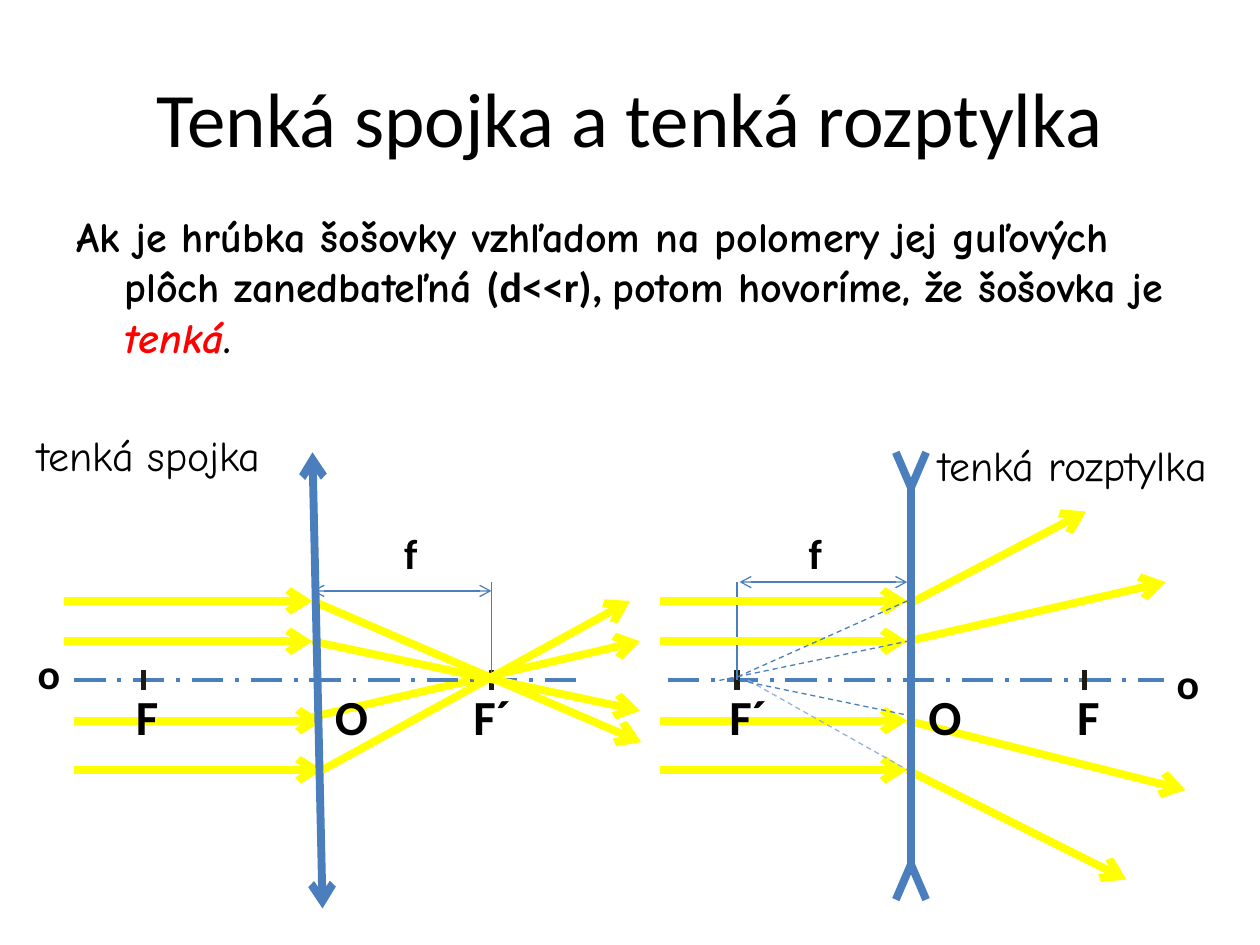
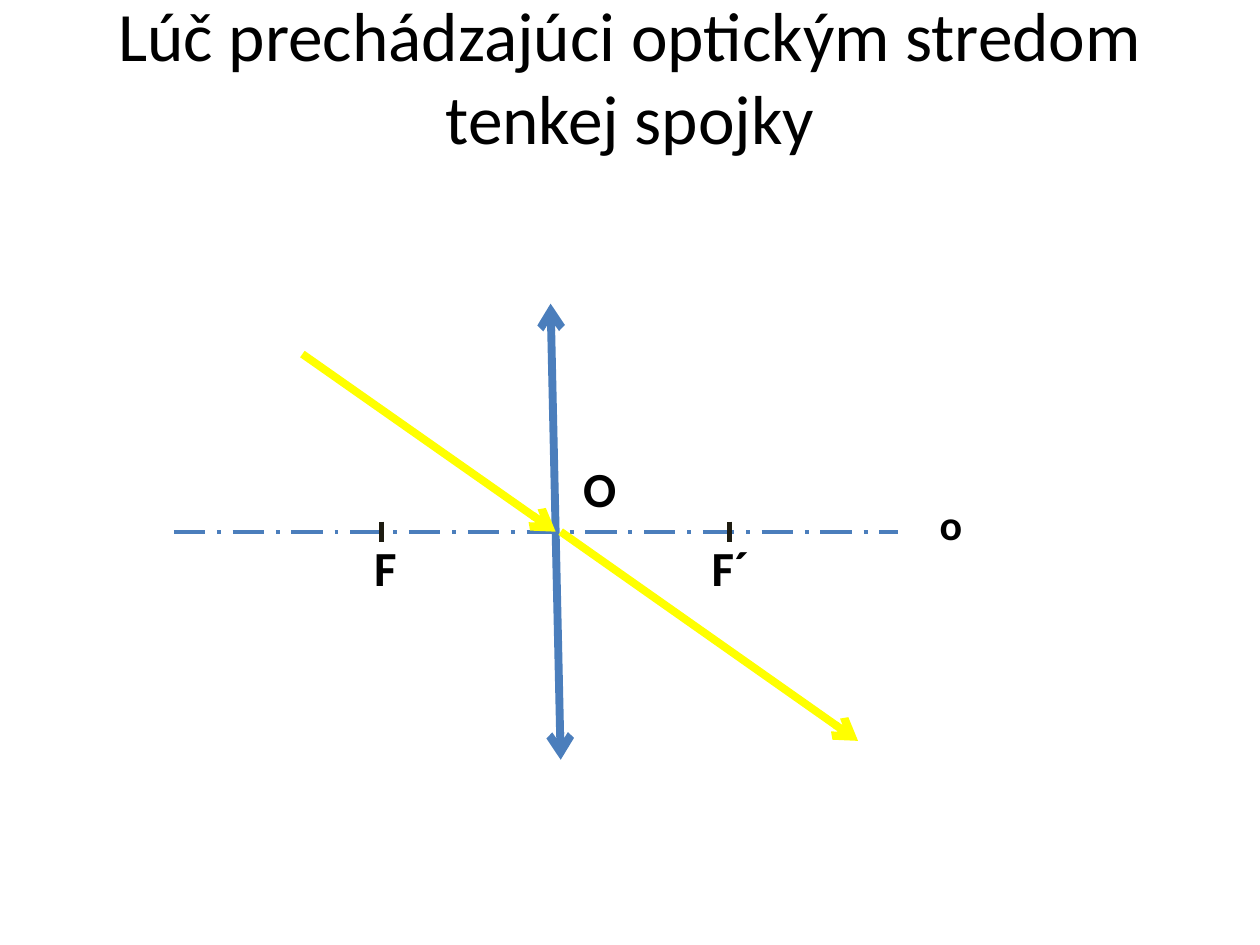
from lxml import etree
from pptx import Presentation
from pptx import util as u
from pptx.dml.color import RGBColor
from pptx.enum import dml, shapes, text
from pptx.oxml.ns import qn

BLACK = RGBColor(0x00, 0x00, 0x00)
RED = RGBColor(0xFF, 0x00, 0x00)
YELLOW = RGBColor(0xFF, 0xFF, 0x00)
BLUE = RGBColor(0x4B, 0x7E, 0xBC)
PALE_BLUE = RGBColor(0x95, 0xB3, 0xD7)
TICK = RGBColor(0x1E, 0x1C, 0x11)
SANS, HAND = "Calibri", "Comic Neue"
POINT_WIDTHS = {"F": 0.38, "F´": 0.5, "O": 0.47}


def add_run(p, content, font=SANS, size=24, color=BLACK, bold=False, italic=False):
    r = p.add_run()
    r.text = content
    f = r.font
    f.name, f.size, f.bold, f.italic = font, u.Pt(size), bold, italic
    f.color.rgb = color


class Deck:
    """Holds the presentation, its shared style and the current slide."""

    def __init__(self):
        self.prs = Presentation()
        self.prs.slide_width, self.prs.slide_height = u.Inches(10), u.Inches(7.5)

    def slide(self, title, size, anchor=text.MSO_ANCHOR.MIDDLE, bottom=0.05):
        self.s = self.prs.slides.add_slide(self.prs.slide_layouts[5])
        sp = self.s.shapes.title
        sp.left, sp.top, sp.width, sp.height = map(u.Inches, (0.5, 0.3, 9, 1.25))
        tf = sp.text_frame
        tf.auto_size = text.MSO_AUTO_SIZE.NONE
        tf.vertical_anchor, tf.margin_bottom = anchor, u.Inches(bottom)
        p = tf.paragraphs[0]
        p.alignment = text.PP_ALIGN.CENTER
        add_run(p, title, size=size)

    def box(self, x, y, w, h, wrap=False):
        tf = self.s.shapes.add_textbox(*map(u.Inches, (x, y, w, h))).text_frame
        tf.word_wrap = wrap
        tf.auto_size = text.MSO_AUTO_SIZE.SHAPE_TO_FIT_TEXT
        return tf.paragraphs[0]

    def label(self, content, x, y, w=0.38, h=0.5, **fmt):
        add_run(self.box(x, y, w, h), content, **fmt)

    def points(self, *labels):
        for content, x, y in labels:
            self.label(content, x, y, POINT_WIDTHS[content], 0.57, size=28, bold=True)

    def line(self, x1, y1, x2, y2, color=BLUE, width=4.5, dash=None, ends=(), parent=None):
        owner = parent or self.s
        sp = owner.shapes.add_connector(
            shapes.MSO_CONNECTOR.STRAIGHT, *map(u.Inches, (x1, y1, x2, y2)))
        sp.line.color.rgb, sp.line.width = color, u.Pt(width)
        if dash:
            sp.line.dash_style = dash
        ln = sp.line._get_or_add_ln()
        for end in ends:
            etree.SubElement(ln, qn(f"a:{end}"), type="arrow")
        etree.SubElement(sp._element.spPr, qn("a:effectLst"))

    def rays(self, *rays):
        for ray in rays:
            self.line(*ray, color=YELLOW, ends=("tailEnd",))

    def axis(self, x1, x2, y, *foci):
        self.line(x1, y, x2, y, width=2.25, dash=dml.MSO_LINE.LONG_DASH_DOT)
        for x in foci:
            self.line(x, y - 0.08, x, y + 0.08, TICK, 3)

    def focal_length(self, label_x, focus, y, axis_y, start, end):
        self.line(focus, 4.62, focus, axis_y, width=0.75)
        self.line(start, y, end, y, width=0.75, ends=("headEnd", "tailEnd"))
        self.label("f", label_x, 4.14, 0.31, bold=True)

    def converging_lens(self, x, y):
        self.line(x, y, x + 0.08, y + 3.62, ends=("headEnd", "tailEnd"))

    def diverging_lens(self, x, top, bottom):
        group = self.s.shapes.add_group_shape()
        self.line(x, top, x, bottom, parent=group)
        for y, tip in ((top, top - 0.28), (bottom, bottom + 0.28)):
            for dx in (0.12, -0.12):
                self.line(x, y, x + dx, tip, parent=group)


def thin_lenses(d):
    d.slide("Tenká spojka a tenká rozptylka", 44)
    d.rays((5.24, 5.72, 7.2, 5.72), (2.48, 5.69, 5.08, 5.09), (7.2, 6.11, 8.94, 6.98),
           (7.2, 5.72, 9.41, 6.27), (0.59, 5.72, 2.56, 5.72))

    p = d.box(0.51, 1.62, 9, 1.5, wrap=True)
    p.space_before = u.Pt(4.8)
    p._p.get_or_add_pPr().set("marL", str(u.Inches(0.38)))
    p._p.get_or_add_pPr().set("indent", str(u.Inches(-0.38)))
    add_run(p, "Ak je hrúbka šošovky vzhľadom na polomery jej guľových plôch zanedbateľná ",
            font=HAND, bold=True)
    add_run(p, "(d<<r), ", bold=True)
    add_run(p, "potom hovoríme, že šošovka je ", font=HAND, bold=True)
    add_run(p, "tenká", font=HAND, color=RED, bold=True, italic=True)
    add_run(p, ".", font=HAND, bold=True)

    d.axis(0.59, 4.61, 5.4, 1.14, 3.9)
    d.axis(5.3, 9.24, 5.4, 5.85, 8.61)
    d.label("tenká spojka", 0.2, 3.36, 2.18, font=HAND)
    d.label("tenká rozptylka", 7.35, 3.44, 2.65, font=HAND)
    d.points(("F", 0.98, 5.4), ("F´", 3.66, 5.4), ("F´", 5.69, 5.4),
             ("F", 8.45, 5.4), ("O", 7.27, 5.4), ("O", 2.56, 5.4))
    d.focal_length(3.11, 3.9, 4.69, 5.4, 2.48, 3.9)
    d.focal_length(6.32, 5.85, 4.62, 5.4, 5.87, 7.2)
    d.label("o", 0.2, 5.09, bold=True)
    d.label("o", 9.24, 5.17, bold=True)

    d.rays((0.51, 5.09, 2.48, 5.09), (2.48, 5.09, 5.08, 5.64), (0.51, 4.77, 2.48, 4.77),
           (2.48, 4.77, 5.09, 5.89), (2.56, 6.11, 5, 4.77), (0.59, 6.11, 2.56, 6.11))
    d.rays(*((5.24, y, 7.2, y) for y in (6.11, 4.77, 5.09)))
    d.rays((7.2, 4.8, 8.62, 4.06), (7.2, 5.09, 9.25, 4.62))
    for x1, x2, y2, color in ((5.79, 7.2, 4.77, BLUE), (5.71, 7.2, 5.09, BLUE),
                              (5.94, 7.2, 6.11, PALE_BLUE), (5.87, 7.27, 5.69, BLUE)):
        d.line(x1, 5.4, x2, y2, color, 0.75, dml.MSO_LINE.DASH)
    d.converging_lens(2.48, 3.59)
    d.diverging_lens(7.23, 3.87, 6.86)


def central_ray(d):
    d.slide("Lúč prechádzajúci optickým stredom tenkej spojky", 39.6,
            text.MSO_ANCHOR.BOTTOM, 0.29)
    d.converging_lens(4.37, 2.41)
    d.axis(1.38, 7.13, 4.22, 5.79, 3.03)
    d.points(("F", 2.87, 4.22), ("F´", 5.55, 4.22), ("O", 4.53, 3.59))
    d.label("o", 7.36, 3.91, bold=True)
    d.rays((4.45, 4.22, 6.81, 5.88), (2.4, 2.81, 4.41, 4.22))


def main():
    d = Deck()
    thin_lenses(d)
    central_ray(d)
    d.prs.save("out.pptx")


if __name__ == "__main__":
    main()
